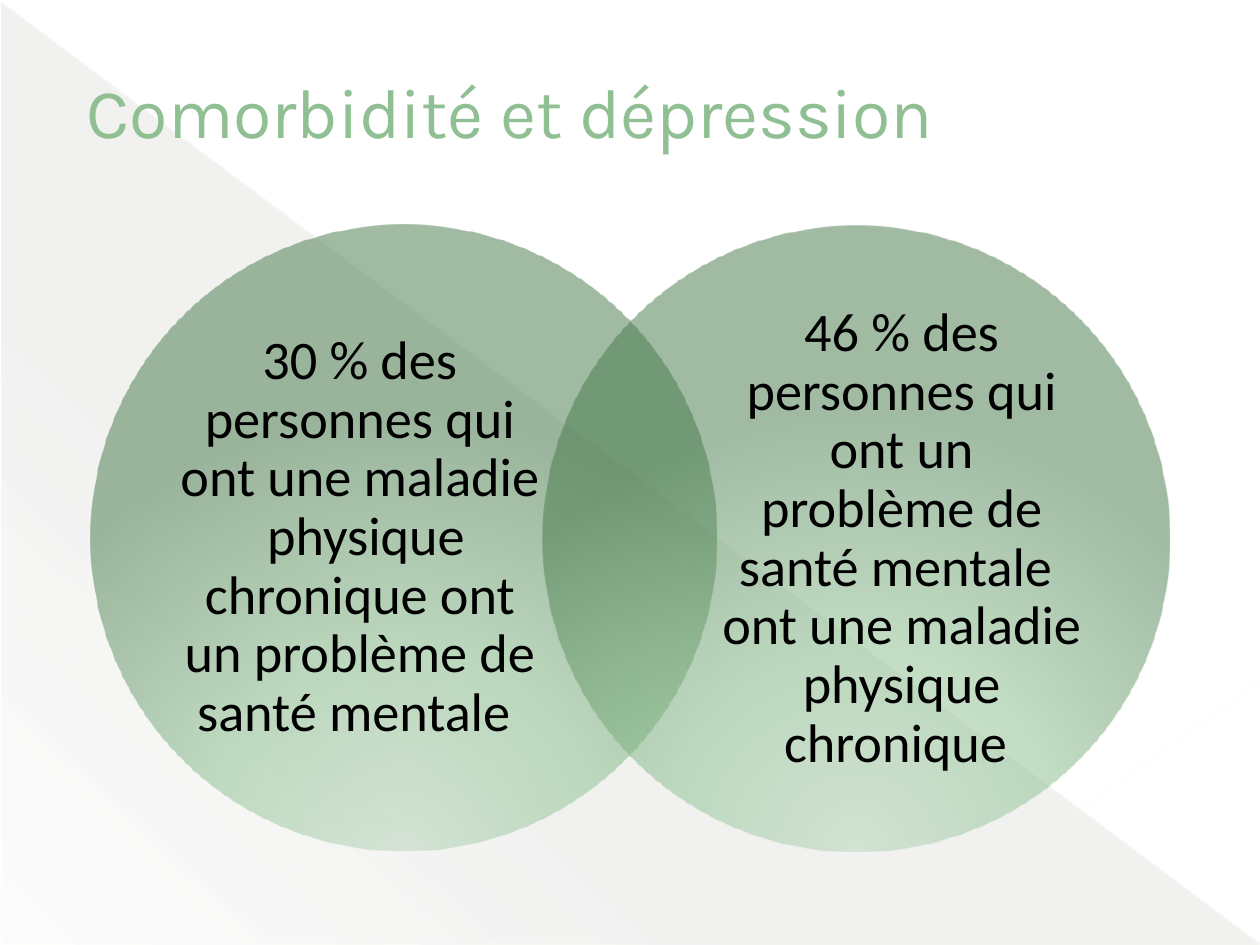
from lxml.etree import SubElement
from pptx import Presentation
from pptx.dml.color import RGBColor
from pptx.enum.shapes import MSO_CONNECTOR, MSO_SHAPE
from pptx.enum.text import MSO_ANCHOR, PP_ALIGN
from pptx.oxml import parse_xml
from pptx.oxml.ns import nsdecls, qn
from pptx.util import Inches, Pt

COLORS = {
    "title": "8FBF93", "text": "000000", "wedge": "676A55",
    "diagonal": "F7F8EA", "corner": "F7F8EC",
    "light": "B6D4B8", "medium": "87BE8B", "dark": "437747",
}
CIRCLE_SIZE = 4.97
TEXT_WIDTH, TEXT_HEIGHT = 2.87, 3.8


def set_gradient(shape, stops, direction):
    """Fill with (position %, colour name, opacity %) stops."""
    shape.shadow.inherit = False
    shape.line.fill.background()
    stop_xml = "".join(
        f'<a:gs pos="{position * 1000}"><a:srgbClr val="{COLORS[name]}">'
        f'<a:alpha val="{opacity * 1000}"/></a:srgbClr></a:gs>'
        for position, name, opacity in stops)
    gradient = parse_xml(
        f'<a:gradFill {nsdecls("a")} rotWithShape="1"><a:gsLst>{stop_xml}</a:gsLst>'
        f'{direction}</a:gradFill>')
    shape._element.spPr.find(qn("a:prstGeom")).addnext(gradient)


prs = Presentation()
prs.slide_width, prs.slide_height = Inches(10), Inches(7.5)
slide = prs.slides.add_slide(prs.slide_layouts[5])
shapes = slide.shapes

# Background wedge
wedge = shapes.add_shape(MSO_SHAPE.RIGHT_TRIANGLE, Inches(0.01), Inches(0.02),
                         Inches(9.99), Inches(7.48))
set_gradient(wedge, [(0, "wedge", 10), (70, "wedge", 8), (100, "wedge", 1)],
             f'<a:lin ang="{133 * 60000}" scaled="1"/>')

# Background lines
for start, end, name, width, opacity in [
    ((0, 0.01), (9.99, 7.49), "diagonal", 0.39, 35),
    ((10, 5.41), (7.07, 7.49), "corner", 0.47, 45),
]:
    edge = shapes.add_connector(MSO_CONNECTOR.STRAIGHT,
                                *(Inches(value) for value in start + end))
    edge.line.width = Pt(width)
    edge.line.color.rgb = RGBColor.from_string(COLORS[name])
    edge_color = edge._element.spPr.find(".//" + qn("a:srgbClr"))
    SubElement(edge_color, qn("a:alpha"), val=str(opacity * 1000))
    SubElement(edge._element.spPr, qn("a:effectLst"))

# Title, brought in front of the background
title = shapes.title
shapes._spTree.append(title._element)
title.left, title.top = Inches(0.5), Inches(0.29)
title.width, title.height = Inches(9), Inches(1.17)
title.text_frame.text = "Comorbidité et dépression"
title.text_frame.vertical_anchor = MSO_ANCHOR.MIDDLE
heading = title.text_frame.paragraphs[0]
heading.alignment = PP_ALIGN.LEFT
heading._p.get_or_add_pPr().set("marL", str(Inches(0.09)))
heading_font = heading.runs[0].font
heading_font.name, heading_font.size = "Karla", Pt(40)
heading_font.color.rgb = RGBColor.from_string(COLORS["title"])

# Overlapping circles, each with its statement
for circle_left, circle_top, text_left, text_top, statement in [
    (0.72, 1.78, 1.42, 2.37, "30 % des personnes qui ont une maladie  physique "
                             "chronique ont un problème de santé mentale "),
    (4.31, 1.79, 5.72, 2.38, "46 % des personnes qui ont un problème de santé mentale  "
                             "ont une maladie physique chronique "),
]:
    circle = shapes.add_shape(MSO_SHAPE.OVAL, Inches(circle_left), Inches(circle_top),
                              Inches(CIRCLE_SIZE), Inches(CIRCLE_SIZE))
    set_gradient(circle, [(0, "light", 50), (46, "medium", 50), (100, "dark", 50)],
                 '<a:path path="circle"><a:fillToRect l="50000" t="155000" '
                 'r="50000" b="-55000"/></a:path>')

    label = shapes.add_textbox(Inches(text_left), Inches(text_top),
                               Inches(TEXT_WIDTH), Inches(TEXT_HEIGHT))
    frame = label.text_frame
    frame.word_wrap = True
    frame.vertical_anchor = MSO_ANCHOR.MIDDLE
    frame.margin_left = frame.margin_right = frame.margin_top = frame.margin_bottom = 0
    frame.text = statement
    paragraph = frame.paragraphs[0]
    paragraph.alignment = PP_ALIGN.CENTER
    paragraph.line_spacing = 0.9
    font = paragraph.runs[0].font
    font.name, font.size = "Calibri", Pt(31)
    font.color.rgb = RGBColor.from_string(COLORS["text"])

prs.save("out.pptx")
